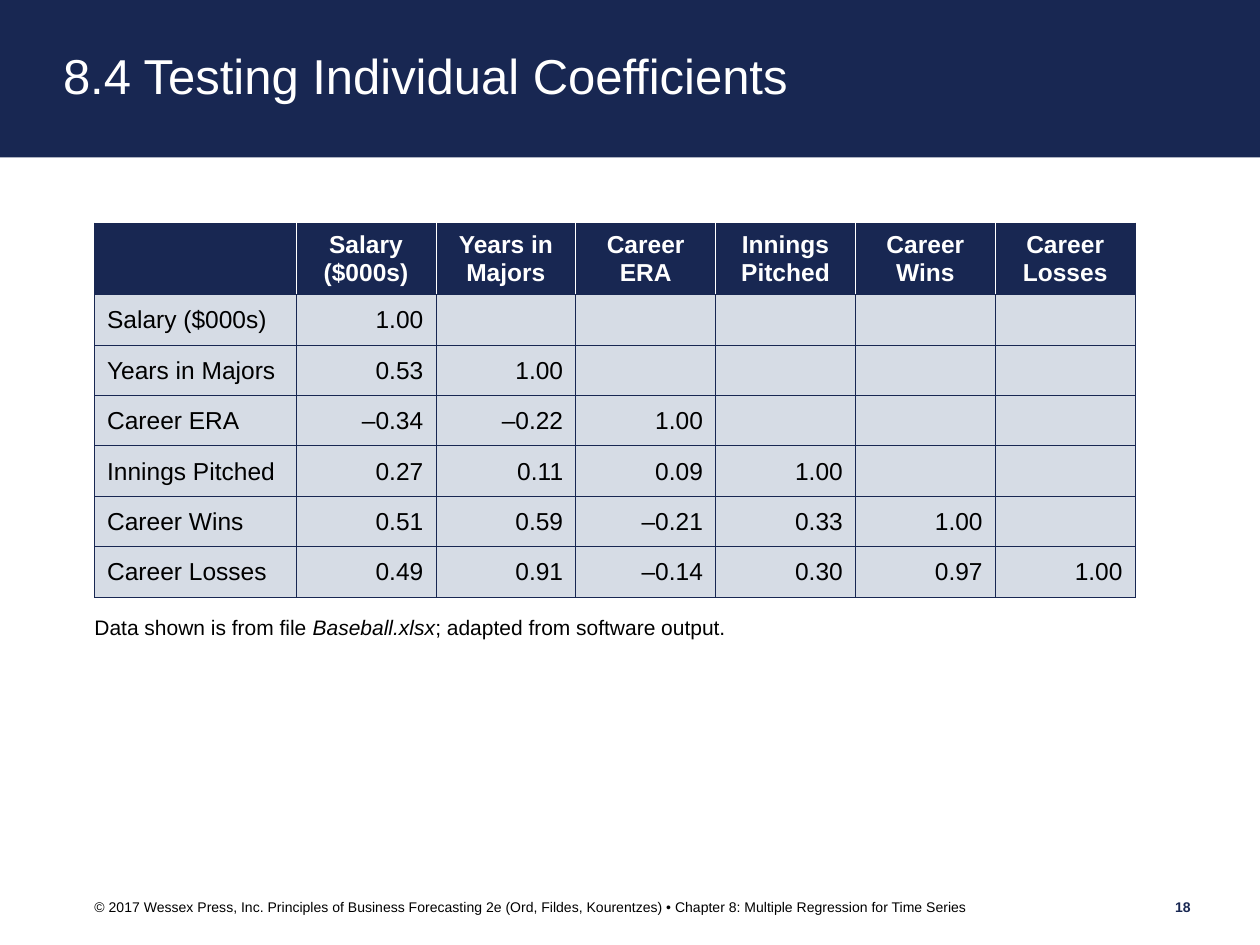
from dataclasses import dataclass

from lxml.etree import SubElement
from pptx import Presentation
from pptx.dml.color import RGBColor
from pptx.enum.text import MSO_ANCHOR as Anchor, MSO_AUTO_SIZE as AutoSize, PP_ALIGN as Align
from pptx.oxml.ns import qn
from pptx.util import Inches, Pt


@dataclass(frozen=True)
class Theme:
    font: str = "Arial"
    navy: str = "182752"
    pale: str = "D6DCE5"
    white: str = "FFFFFF"
    black: str = "000000"
    title_size: int = 28
    table_size: int = 14
    note_size: int = 12
    footer_size: int = 8
    border_width: float = 0.5


THEME = Theme()

TITLE = "8.4 Testing Individual Coefficients"
VARIABLES = ["Salary ($000s)", "Years in Majors", "Career ERA",
             "Innings Pitched", "Career Wins", "Career Losses"]
CORRELATIONS = [
    ["1.00"],
    ["0.53", "1.00"],
    ["–0.34", "–0.22", "1.00"],
    ["0.27", "0.11", "0.09", "1.00"],
    ["0.51", "0.59", "–0.21", "0.33", "1.00"],
    ["0.49", "0.91", "–0.14", "0.30", "0.97", "1.00"],
]
DATA_NOTE = ["Data shown is from file ", "Baseball.xlsx", "; adapted from software output."]
COPYRIGHT = ("© 2017 Wessex Press, Inc. Principles of Business Forecasting 2e "
             "(Ord, Fildes, Kourentzes) • Chapter 8: Multiple Regression for Time Series")
PAGE_NUMBER = "18"


def format_runs(paragraph, size, color, bold=False, align=Align.LEFT):
    paragraph.alignment = align
    for run in paragraph.runs:
        run.font.name = THEME.font
        run.font.size = Pt(size)
        run.font.bold = bold
        run.font.color.rgb = RGBColor.from_string(color)


def set_margins(holder, left, top, right, bottom):
    holder.margin_left, holder.margin_top = Inches(left), Inches(top)
    holder.margin_right, holder.margin_bottom = Inches(right), Inches(bottom)


def add_title_band(slide):
    band = slide.shapes.title
    band.left, band.top, band.width, band.height = Inches(0), Inches(0), Inches(10), Inches(1.25)
    band.fill.solid()
    band.fill.fore_color.rgb = RGBColor.from_string(THEME.navy)
    frame = band.text_frame
    frame.text = TITLE
    frame.auto_size = AutoSize.NONE
    frame.vertical_anchor = Anchor.MIDDLE
    set_margins(frame, 0.5, 0.05, 0, 0.05)
    frame.paragraphs[0].line_spacing = 0.9
    format_runs(frame.paragraphs[0], THEME.title_size, THEME.white)


def add_line_of_text(slide, left, top, width, parts, size, color=THEME.black,
                     bold=False, align=Align.LEFT, anchor=Anchor.MIDDLE):
    """Add one line of text; every second part is italic."""
    box = slide.shapes.add_textbox(Inches(left), Inches(top), Inches(width), Inches(0.2))
    frame = box.text_frame
    frame.word_wrap = True
    frame.vertical_anchor = anchor
    set_margins(frame, 0, 0, 0, 0)
    line = frame.paragraphs[0]
    for index, part in enumerate(parts):
        run = line.add_run()
        run.text = part
        run.font.italic = index % 2 == 1
    format_runs(line, size, color, bold, align)


def set_borders(cell, left, right):
    """Draw all four edges; top and bottom are always navy."""
    properties = cell._tc.get_or_add_tcPr()
    edges = {"a:lnL": left, "a:lnR": right, "a:lnT": THEME.navy, "a:lnB": THEME.navy}
    for position, (tag, color) in enumerate(edges.items()):
        edge = SubElement(properties, qn(tag), w=str(Pt(THEME.border_width)))
        SubElement(SubElement(edge, qn("a:solidFill")), qn("a:srgbClr"), val=color)
        properties.insert(position, edge)


def fill_cell(cell, text, fill, color, bold, align):
    cell.text = text
    cell.vertical_anchor = Anchor.MIDDLE
    cell.fill.solid()
    cell.fill.fore_color.rgb = RGBColor.from_string(fill)
    format_runs(cell.text_frame.paragraphs[0], THEME.table_size, color, bold, align)


def add_correlation_table(slide):
    count = len(VARIABLES) + 1
    table = slide.shapes.add_table(
        count, count, Inches(0.75), Inches(1.77), Inches(8.25), Inches(0.4 * count)).table
    for index, column in enumerate(table.columns):
        column.width = Inches(1.11 if index else 1.6)

    # Header row, with white rules between its columns
    for index, heading in enumerate([""] + VARIABLES):
        cell = table.cell(0, index)
        fill_cell(cell, heading, THEME.navy, THEME.white, True, Align.CENTER)
        set_borders(cell, THEME.white if index else THEME.navy,
                    THEME.white if index < count - 1 else THEME.navy)

    # Lower triangle of correlations
    for row, (variable, values) in enumerate(zip(VARIABLES, CORRELATIONS), start=1):
        blanks = [""] * (len(VARIABLES) - len(values))
        for index, text in enumerate([variable] + values + blanks):
            cell = table.cell(row, index)
            fill_cell(cell, text, THEME.pale, THEME.black, False,
                      Align.RIGHT if index else Align.LEFT)
            set_margins(cell, 0.1, 0.01, 0.1, 0)
            set_borders(cell, THEME.navy, THEME.navy)


def main():
    deck = Presentation()
    deck.slide_width, deck.slide_height = Inches(10), Inches(7.5)
    slide = deck.slides.add_slide(deck.slide_layouts.get_by_name("Title Only"))

    # Title
    add_title_band(slide)

    # Footer
    add_line_of_text(slide, 0.75, 7.1, 8.14, [COPYRIGHT], THEME.footer_size)
    add_line_of_text(slide, 9, 7.1, 0.45, [PAGE_NUMBER], THEME.footer_size,
                     THEME.navy, bold=True, align=Align.RIGHT)

    # Table and its source note
    add_correlation_table(slide)
    add_line_of_text(slide, 0.75, 4.88, 8, DATA_NOTE, THEME.note_size, anchor=Anchor.TOP)

    deck.save("out.pptx")


if __name__ == "__main__":
    main()
